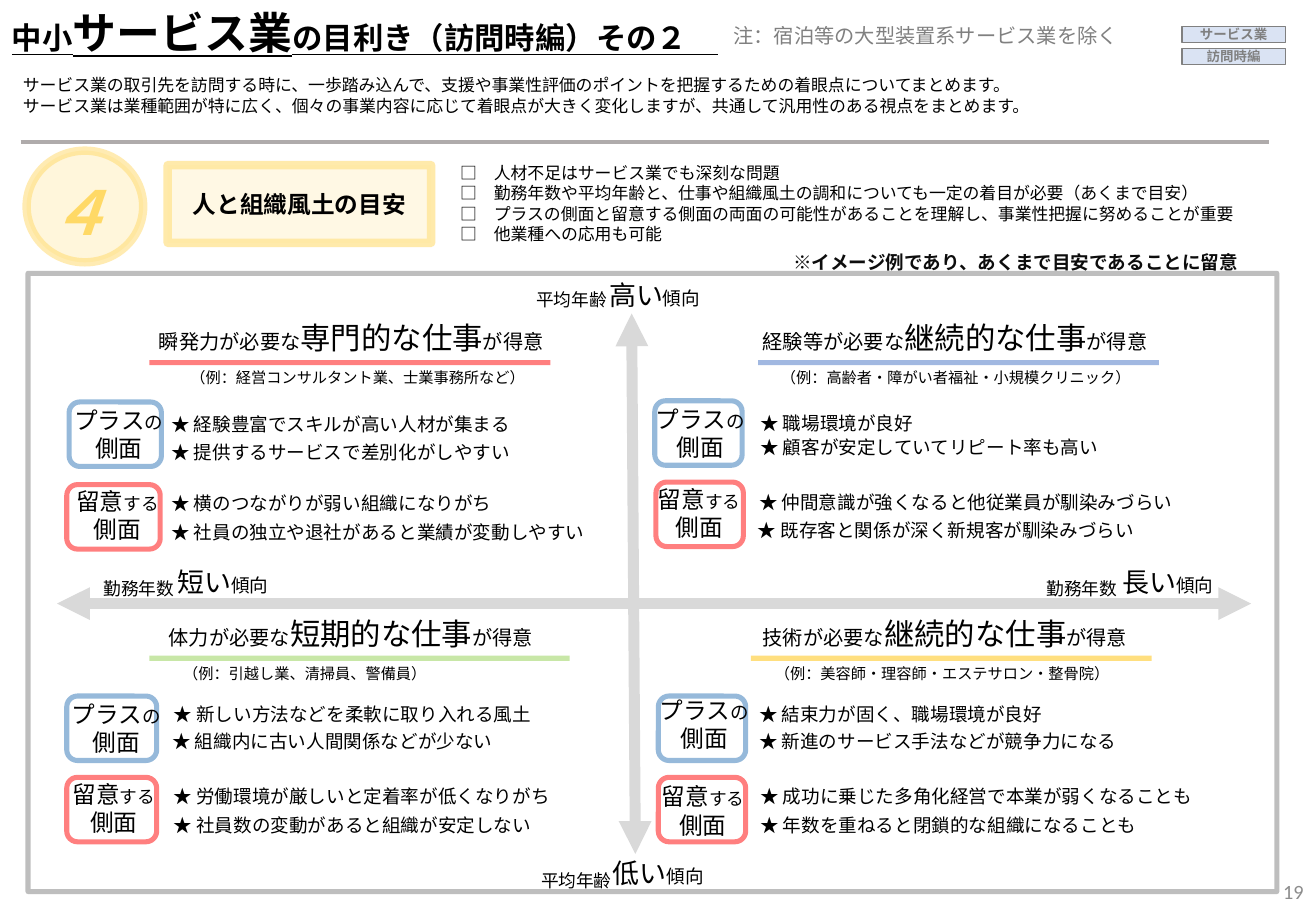
from dataclasses import dataclass

from lxml.etree import SubElement
from pptx import Presentation
from pptx.dml.color import RGBColor
from pptx.enum.shapes import MSO_CONNECTOR, MSO_SHAPE
from pptx.enum.text import MSO_ANCHOR, PP_ALIGN
from pptx.oxml.ns import qn
from pptx.util import Pt

BLACK = RGBColor(0x00, 0x00, 0x00)
INK = RGBColor(0x0D, 0x0D, 0x0D)
GRAY = RGBColor(0x80, 0x80, 0x80)
PAGE = RGBColor(0x8C, 0x8C, 0x8C)
FRAME = RGBColor(0xA6, 0xA6, 0xA6)
RULE = RGBColor(0xAF, 0xAB, 0xAB)
AXIS = RGBColor(0xD9, 0xD9, 0xD9)
CREAM = RGBColor(0xFF, 0xE6, 0x99)
GOLD = RGBColor(0xFF, 0xD9, 0x66)
PALE = RGBColor(0xDA, 0xE3, 0xF3)
PLUS = RGBColor(0x2E, 0x75, 0xB6)
RED = RGBColor(0xFF, 0x00, 0x00)
BLUE = RGBColor(0x44, 0x72, 0xC4)
GREEN = RGBColor(0x92, 0xD0, 0x50)
AMBER = RGBColor(0xFF, 0xC0, 0x00)

LATIN, SANS, ASIAN = "Calibri", "Arial", "Noto Sans CJK JP"
LEFT, MID, RIGHT = PP_ALIGN.LEFT, PP_ALIGN.CENTER, PP_ALIGN.RIGHT


@dataclass
class Quad:
    head: tuple
    words: tuple
    rule: tuple
    color: RGBColor
    note: tuple
    plus: tuple
    care: tuple
    stars: tuple


QUADS = (
    Quad((87.1, 185.8), ("瞬発力が必要な", "専門的な仕事"), (88.6, 326.2, 215), RED,
         (105.8, 214.6, "（例：経営コンサルタント業、士業事務所など）"),
         (41, 238.3, 54.7, 34.6, 236.9), (39.6, 287.3, 55.4, 33.8, 285.1),
         ((94.3, 241.2, "経験豊富でスキルが高い人材が集まる"),
          (94.3, 257.8, "提供するサービスで差別化がしやすい"),
          (94.3, 288, "横のつながりが弱い組織になりがち"),
          (94.3, 305.3, "社員の独立や退社があると業績が変動しやすい"))),
    Quad((445, 185.8), ("経験等が必要な", "継続的な仕事"), (449.3, 686.9, 215), BLUE,
         (455.8, 214.6, "（例：高齢者・障がい者福祉・小規模クリニック）"),
         (388.1, 237.6, 51.8, 379.4, 236.2), (388.8, 285.8, 51.8, 378.7, 283.7),
         ((443.5, 240.5, "職場環境が良好"),
          (443.5, 254.9, "顧客が安定していてリピート率も高い"),
          (442.8, 287.3, "仲間意識が強くなると他従業員が馴染みづらい"),
          (442.1, 303.8, "既存客と関係が深く新規客が馴染みづらい"))),
    Quad((92.9, 361.4), ("体力が必要な", "短期的な仕事"), (88.6, 337.7, 390.2), GREEN,
         (101.5, 390.2, "（例：引越し業、清掃員、警備員）"),
         (39.6, 412.6, 53.3, 33.1, 411.1), (39.6, 460.8, 53.3, 31.7, 458.6),
         ((95.8, 413.3, "新しい方法などを柔軟に取り入れる風土"),
          (95, 429.1, "組織内に古い人間関係などが少ない"),
          (95.8, 461.5, "労働環境が厳しいと定着率が低くなりがち"),
          (95.8, 478.8, "社員数の変動があると組織が安定しない"))),
    Quad((445, 361.4), ("技術が必要な", "継続的な仕事"), (445, 682.6, 390.2), AMBER,
         (452.2, 390.2, "（例：美容師・理容師・エステサロン・整骨院）"),
         (390.2, 412.6, 51.8, 381.6, 409), (390.2, 460.8, 51.8, 380.9, 460.1),
         ((442.8, 413.3, "結束力が固く、職場環境が良好"),
          (442.8, 429.1, "新進のサービス手法などが競争力になる"),
          (443.5, 461.5, "成功に乗じた多角化経営で本業が弱くなることも"),
          (443.5, 478.8, "年数を重ねると閉鎖的な組織になることも"))),
)

AXES = (
    ((599.8, 339.1), (654.5, 331.9, 75.6), "勤務年数", "長い", SANS),
    ((41, 339.1), (92.9, 331.9, 78.5), "勤務年数", "短い", LATIN),
    ((297.4, 167.8), (349.9, 161.3, 76.3), "平均年齢", "高い", SANS),
    ((300.2, 511.9), (350.6, 504, 79.2), "平均年齢", "低い", SANS),
)


def fade(fill, alpha):
    color = fill._xPr.find(qn("a:solidFill"))[0]
    SubElement(color, qn("a:alpha"), val=str(alpha * 1000))


def write(frame, paras, font=LATIN, color=BLACK, align=LEFT, bold=False):
    frame.word_wrap = True
    for i, parts in enumerate(paras):
        para = frame.add_paragraph() if i else frame.paragraphs[0]
        para.alignment = align
        para.font.name = font
        para.font.bold = bold
        para.font.color.rgb = color
        base = para._p.pPr.find(qn("a:defRPr"))
        SubElement(base, qn("a:ea"), typeface=ASIAN)
        sizes = {size for _, size in parts}
        if len(sizes) == 1:
            para.font.size = Pt(parts[0][1])
        for text, size in parts:
            run = para.add_run()
            run.text = text
            if len(sizes) > 1:
                run.font.size = Pt(size)


def label(slide, x, y, w, h, *paras, **style):
    box = slide.shapes.add_textbox(Pt(x), Pt(y), Pt(w), Pt(h))
    write(box.text_frame, paras, **style)
    return box.text_frame


def panel(slide, kind, x, y, w, h, edge, width, alpha=100, fill=None, tint=100):
    shape = slide.shapes.add_shape(kind, Pt(x), Pt(y), Pt(w), Pt(h))
    shape.shadow.inherit = False
    if fill is None:
        shape.fill.background()
    else:
        shape.fill.solid()
        shape.fill.fore_color.rgb = fill
        fade(shape.fill, tint)
    shape.line.width = Pt(width)
    shape.line.color.rgb = edge
    fade(shape.line.fill, alpha)
    shape.text_frame.vertical_anchor = MSO_ANCHOR.MIDDLE
    return shape


def stroke(slide, x1, y1, x2, y2, color, width, alpha=100, arrow=False):
    line = slide.shapes.add_connector(
        MSO_CONNECTOR.STRAIGHT, Pt(x1), Pt(y1), Pt(x2), Pt(y2))
    line.line.width = Pt(width)
    line.line.color.rgb = color
    fade(line.line.fill, alpha)
    if arrow:
        for end in ("a:headEnd", "a:tailEnd"):
            SubElement(line.line._ln, qn(end), type="triangle")
    SubElement(line._element.spPr, qn("a:effectLst"))


def badge(slide, spot, color, parts):
    x, y, w, left, top = spot
    panel(slide, MSO_SHAPE.ROUNDED_RECTANGLE, x, y, w, 38.2, color, 3, 50)
    label(slide, left, top, 71.6, 41, parts, [("側面", 14)], font=ASIAN, align=MID)


def draw_quad(slide, quad):
    first, main_word = quad.words
    label(slide, *quad.head, 256, 28.8,
          [(first, 12), (main_word, 18), ("が得意", 12)], font=ASIAN)
    x1, x2, y = quad.rule
    stroke(slide, x1, y, x2, y, quad.color, 3, 50)
    x, y, text = quad.note
    label(slide, x, y, 233, 18, [(text, 9)])
    badge(slide, quad.plus, PLUS, [("プラス", 14), ("の", 11)])
    badge(slide, quad.care, RED, [("留意", 14), ("する", 10.5)])
    for x, y, text in quad.stars:
        label(slide, x, y, 300, 20.9, [("★ " + text, 11)])


def draw_top(slide):
    title = label(slide, 0, 0, 507.6, 38.9,
                  [("中小", 18), ("サービス業", 26),
                   ("の目利き（訪問時編）その２", 18), ("　", 18)],
                  font=SANS, bold=True)
    title.paragraphs[0].font.underline = True
    title.paragraphs[0].runs[-1].font.bold = False
    label(slide, 427.7, 10.1, 349.2, 21.6,
          [("注：宿泊等の大型装置系サービス業を除く", 12)], font=ASIAN, color=GRAY)
    for y, text in ((15.8, "サービス業"), (28.8, "訪問時編")):
        tag = panel(slide, MSO_SHAPE.RECTANGLE, 700.6, y, 61.2, 9.4,
                    GRAY, 0.75, fill=PALE)
        frame = tag.text_frame
        frame.margin_left = frame.margin_right = Pt(0)
        frame.margin_top = frame.margin_bottom = Pt(0)
        write(frame, [[(text, 8)]], color=GRAY, align=MID, bold=True)
    intro = ("サービス業の取引先を訪問する時に、一歩踏み込んで、支援や事業性評価のポイントを把握するための着眼点についてまとめます。"
             "サービス業は業種範囲が特に広く、個々の事業内容に応じて着眼点が大きく変化しますが、共通して汎用性のある視点をまとめます。")
    label(slide, 6.5, 41, 617, 31.7, [(intro, 10)])
    stroke(slide, 12.2, 84.2, 752.4, 84.2, RULE, 2.25)


def draw_theme(slide):
    theme = panel(slide, MSO_SHAPE.RECTANGLE, 99.4, 97.9, 156.2, 46.1,
                  CREAM, 5, 82, CREAM, 26)
    write(theme.text_frame, [[("人と組織風土の目安", 14)]], align=MID, bold=True)
    panel(slide, MSO_SHAPE.OVAL, 15.8, 89.3, 69.1, 66.2, GOLD, 5, 49, GOLD, 23)
    digit = label(slide, 21.6, 100.1, 84.2, 48.2, [("４", 36)],
                  font=SANS, color=GOLD, bold=True)
    digit.paragraphs[0].font.italic = True
    checks = ("人材不足はサービス業でも深刻な問題",
              "勤務年数や平均年齢と、仕事や組織風土の調和についても一定の着目が必要（あくまで目安）",
              "プラスの側面と留意する側面の両面の可能性があることを理解し、事業性把握に努めることが重要",
              "他業種への応用も可能")
    label(slide, 265.7, 92.9, 478.8, 55.4,
          *[[("□　" + text, 10)] for text in checks], font=SANS)


def draw_axes(slide):
    for near, far, text, word, font in AXES:
        label(slide, *near, 82.8, 20.9, [(text, 10.5)], font=font, align=MID)
        label(slide, *far, 26.6, [(word, 16), ("傾向", 11)], font=ASIAN, align=MID)
    stroke(slide, 33.8, 357.8, 741.6, 357.8, AXIS, 6.5, arrow=True)
    stroke(slide, 374.4, 185.8, 376.6, 506.2, AXIS, 6.5, arrow=True)


def main():
    deck = Presentation()
    deck.slide_width, deck.slide_height = Pt(780), Pt(540)
    slide = deck.slides.add_slide(deck.slide_layouts[6])
    draw_theme(slide)
    for quad in QUADS:
        draw_quad(slide, quad)
    panel(slide, MSO_SHAPE.RECTANGLE, 16.6, 162, 740.2, 366.5, FRAME, 3, 73)
    label(slide, 463, 145.4, 303.8, 20.9,
          [("※イメージ例であり、あくまで目安であることに留意", 11)], color=INK, bold=True)
    draw_top(slide)
    draw_axes(slide)
    page = label(slide, 741.6, 517, 38.2, 23, [("19", 12)], color=PAGE, align=RIGHT)
    page.vertical_anchor = MSO_ANCHOR.MIDDLE
    deck.save("out.pptx")


if __name__ == "__main__":
    main()
